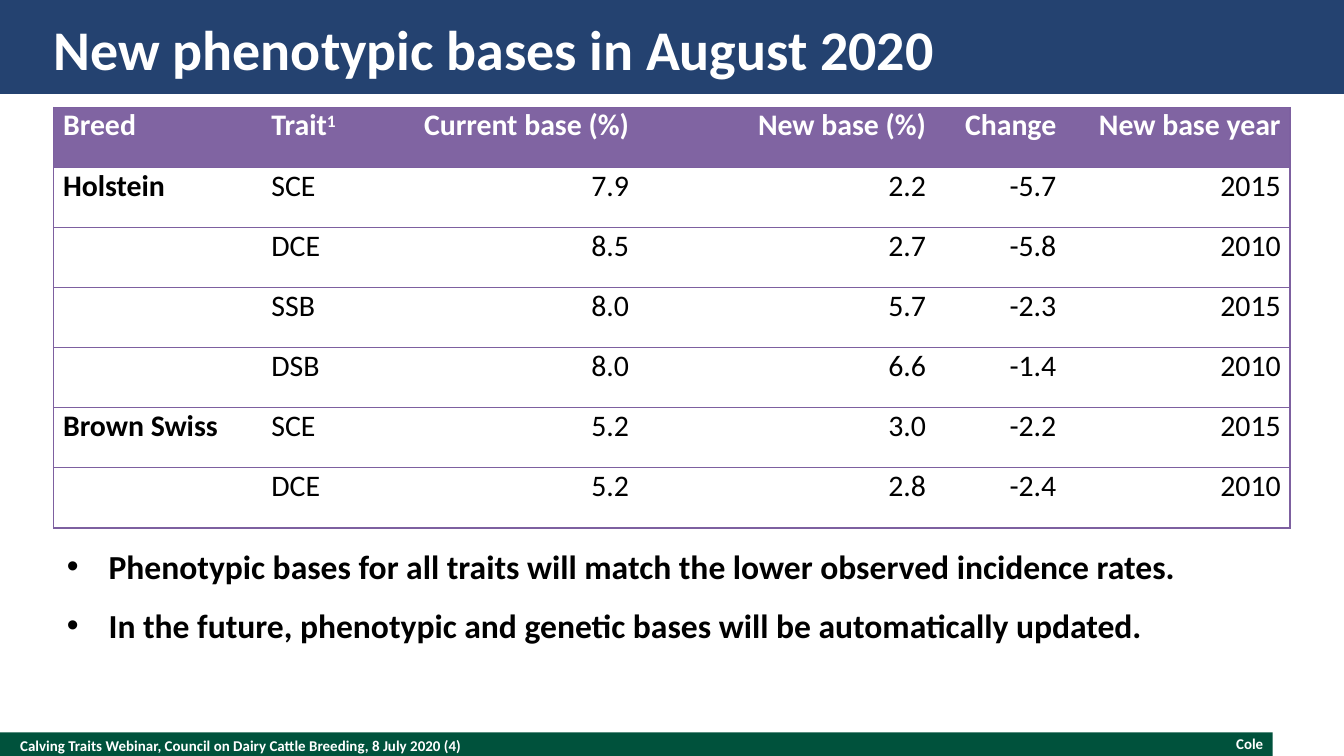
from dataclasses import dataclass

from lxml.etree import SubElement
from pptx import Presentation
from pptx.dml.color import RGBColor
from pptx.enum.shapes import MSO_SHAPE
from pptx.enum.text import MSO_ANCHOR, PP_ALIGN
from pptx.oxml import parse_xml
from pptx.oxml.ns import nsdecls, qn
from pptx.util import Inches, Pt


@dataclass(frozen=True)
class Theme:
    font: str = "Calibri"
    navy: str = "244270"
    green: str = "00523C"
    header: str = "8064A2"
    rule: str = "7D60A0"
    white: str = "FFFFFF"
    black: str = "000000"
    title_size: int = 30
    bullet_size: int = 18
    table_size: int = 16
    footer_size: int = 8
    rule_width: float = 0.75


HEADINGS = ["Breed", "Trait", "Current base (%)", "New base (%)", "Change", "New base year"]
BASES = [
    ["Holstein", "SCE", "7.9", "2.2", "-5.7", "2015"],
    ["", "DCE", "8.5", "2.7", "-5.8", "2010"],
    ["", "SSB", "8.0", "5.7", "-2.3", "2015"],
    ["", "DSB", "8.0", "6.6", "-1.4", "2010"],
    ["Brown Swiss", "SCE", "5.2", "3.0", "-2.2", "2015"],
    ["", "DCE", "5.2", "2.8", "-2.4", "2010"],
]
COLUMN_WIDTHS = [1.55, 0.75, 2.05, 2.21, 0.97, 1.67]
TABLE_HEIGHT = 3.13
TEXT_COLUMNS = 2
CONCLUSIONS = [
    "Phenotypic bases for all traits will match the lower observed incidence rates.",
    "In the future, phenotypic and genetic bases will be automatically updated.",
]


class SlideBuilder:
    def __init__(self, slide, theme):
        self.slide = slide
        self.theme = theme

    def run(self, paragraph, text, size, color, bold=True):
        run = paragraph.add_run()
        run.text = text
        run.font.name = self.theme.font
        run.font.size = Pt(size)
        run.font.bold = bold
        run.font.color.rgb = RGBColor.from_string(color)
        return run

    def band(self, left, top, width, height, color):
        band = self.slide.shapes.add_shape(
            MSO_SHAPE.RECTANGLE, Inches(left), Inches(top), Inches(width), Inches(height))
        band.shadow.inherit = False
        band.fill.solid()
        band.fill.fore_color.rgb = RGBColor.from_string(color)
        band.line.fill.background()

    def text_frame(self, left, top, width, height):
        box = self.slide.shapes.add_textbox(
            Inches(left), Inches(top), Inches(width), Inches(height))
        box.text_frame.word_wrap = True
        return box.text_frame

    def label(self, left, top, width, height, text, size, align=PP_ALIGN.LEFT):
        """Add one white line, centred vertically, without insets."""
        frame = self.text_frame(left, top, width, height)
        frame.margin_left = frame.margin_right = 0
        frame.margin_top = frame.margin_bottom = 0
        frame.vertical_anchor = MSO_ANCHOR.MIDDLE
        paragraph = frame.paragraphs[0]
        paragraph.alignment = align
        self.run(paragraph, text, size, self.theme.white)

    def bullets(self, left, top, width, height, items):
        frame = self.text_frame(left, top, width, height)
        for index, item in enumerate(items):
            paragraph = frame.add_paragraph() if index else frame.paragraphs[0]
            properties = paragraph._p.get_or_add_pPr()
            properties.set("marL", str(Inches(0.31)))
            properties.set("indent", str(Inches(-0.31)))
            color = SubElement(properties, qn("a:buClr"))
            SubElement(color, qn("a:srgbClr")).set("val", self.theme.black)
            SubElement(properties, qn("a:buFont")).set("typeface", "Arial")
            SubElement(properties, qn("a:buChar")).set("char", "•")
            if index:
                paragraph.space_before = Pt(10)
            self.run(paragraph, item, self.theme.bullet_size, self.theme.black)

    def borders(self, cell, visible_sides):
        properties = cell._tc.get_or_add_tcPr()
        for position, side in enumerate("LRTB"):
            paint = "<a:noFill/>"
            if side in visible_sides:
                paint = f'<a:solidFill><a:srgbClr val="{self.theme.rule}"/></a:solidFill>'
            properties.insert(position, parse_xml(
                f'<a:ln{side} {nsdecls("a")} w="{Pt(self.theme.rule_width)}">{paint}</a:ln{side}>'))

    def cell(self, cell, text, color, bold, align):
        cell.margin_left = cell.margin_right = Inches(0.07)
        cell.margin_top = cell.margin_bottom = 0
        paragraph = cell.text_frame.paragraphs[0]
        paragraph.alignment = align
        if text:
            self.run(paragraph, text, self.theme.table_size, color, bold)
        return paragraph

    def table(self, left, top, widths, height, rows):
        """Add a ruled table and return the paragraphs of its header row."""
        table = self.slide.shapes.add_table(
            len(rows), len(widths), Inches(left), Inches(top),
            Inches(sum(widths)), Inches(height)).table
        table.horz_banding = False
        for column, width in zip(table.columns, widths):
            column.width = Inches(width)
        headings = []
        for r, values in enumerate(rows):
            table.rows[r].height = Inches(height / len(rows))
            for c, value in enumerate(values):
                cell = table.cell(r, c)
                is_header = r == 0
                if is_header:
                    cell.fill.solid()
                    cell.fill.fore_color.rgb = RGBColor.from_string(self.theme.header)
                else:
                    cell.fill.background()
                paragraph = self.cell(
                    cell, value,
                    self.theme.white if is_header else self.theme.black,
                    is_header or c == 0,
                    PP_ALIGN.LEFT if c < TEXT_COLUMNS else PP_ALIGN.RIGHT)
                outer = {0: "L", len(widths) - 1: "R"}.get(c, "")
                self.borders(cell, "TB" + outer)
                if is_header:
                    headings.append(paragraph)
        return headings

    def superscript(self, paragraph, mark):
        run = self.run(paragraph, mark, self.theme.table_size, self.theme.white)
        run._r.get_or_add_rPr().set("baseline", "30000")


def main():
    presentation = Presentation()
    presentation.slide_width = Inches(10)
    presentation.slide_height = presentation.slide_width * 9 // 16
    theme = Theme()
    builder = SlideBuilder(
        presentation.slides.add_slide(presentation.slide_layouts[6]), theme)

    builder.band(0, 5.45, 9.47, 0.2, theme.green)
    builder.band(0, 0, 10, 0.7, theme.navy)
    builder.label(0.15, 5.45, 6.5, 0.2,
                  "Calving Traits Webinar, Council on Dairy Cattle Breeding, 8 July 2020 (4)",
                  theme.footer_size)
    builder.label(7.2, 5.47, 2.2, 0.13, "Cole", theme.footer_size, PP_ALIGN.RIGHT)
    builder.label(0.4, 0.1, 9.2, 0.52, "New phenotypic bases in August 2020", theme.title_size)

    headings = builder.table(0.4, 0.8, COLUMN_WIDTHS, TABLE_HEIGHT, [HEADINGS] + BASES)
    builder.superscript(headings[HEADINGS.index("Trait")], "1")
    builder.bullets(0.4, 4.01, 9.2, 0.89, CONCLUSIONS)

    presentation.save("out.pptx")


if __name__ == "__main__":
    main()
